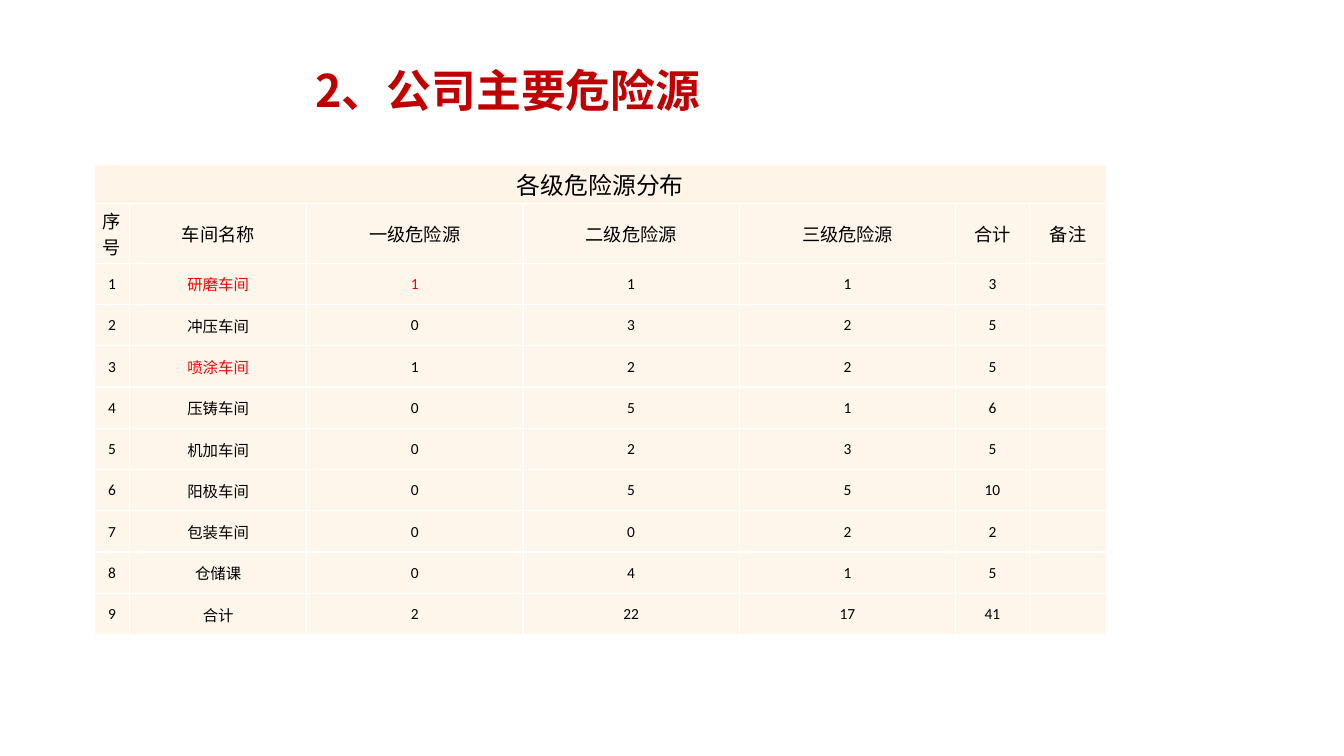
from pptx import Presentation
from pptx.dml.color import RGBColor
from pptx.enum import text as tx
from pptx.oxml import parse_xml
from pptx.oxml.ns import nsdecls
from pptx.util import Cm, Pt

# Content
TITLE = "2、公司主要危险源"
CAPTION = "各级危险源分布"
HEADS = ["序号", "车间名称", "一级危险源", "二级危险源", "三级危险源", "合计", "备注"]
SHOPS = [
    ("研磨车间", 1, 1, 1, 3),
    ("冲压车间", 0, 3, 2, 5),
    ("喷涂车间", 1, 2, 2, 5),
    ("压铸车间", 0, 5, 1, 6),
    ("机加车间", 0, 2, 3, 5),
    ("阳极车间", 0, 5, 5, 10),
    ("包装车间", 0, 0, 2, 2),
    ("仓储课", 0, 4, 1, 5),
    ("合计", 2, 22, 17, 41),
]
ALERTS = {(2, 1), (2, 2), (4, 1)}  # red cells: row, column

# Style
CJK, LATIN = "Noto Sans CJK SC", "Calibri"
BLACK, RED, DARK, CREAM, WHITE = "000000", "FF0000", "C00000", "FFF4E7", "FFFFFF"
WIDTHS = [0.9, 4.46, 5.45, 5.45, 5.45, 1.86, 1.95]
HEIGHTS = [0.99, 1.5] + [1.04] * len(SHOPS)
SIZES = [17, 13] + [11] * len(SHOPS)


def paint(target, code):
    target.rgb = RGBColor.from_string(code)


def write(para, words, size, color, face, bold=False):
    run = para.add_run()
    run.text = words
    font = run.font
    font.size, font.bold, font.name = Pt(size), bold, face
    paint(font.color, color)
    font._element.find("{*}latin").addnext(
        parse_xml(f'<a:ea {nsdecls("a")} typeface="{CJK}"/>'))


def dress(cell, alpha):
    cell.margin_left = cell.margin_right = cell.margin_top = Cm(0.02)
    cell.margin_bottom = 0
    cell.vertical_anchor = tx.MSO_ANCHOR.MIDDLE
    cell.fill.solid()
    paint(cell.fill.fore_color, CREAM)
    props = cell._tc.get_or_add_tcPr()
    if alpha < 100:
        props.find(".//{*}srgbClr").append(
            parse_xml(f'<a:alpha {nsdecls("a")} val="{alpha * 1000}"/>'))
    for i, side in enumerate("LRTB"):
        props.insert(i, parse_xml(
            f'<a:ln{side} {nsdecls("a")} w="12700"><a:solidFill>'
            f'<a:srgbClr val="{WHITE}"/></a:solidFill></a:ln{side}>'))


deck = Presentation()
deck.slide_width, deck.slide_height = Cm(33.87), Cm(19.05)
slide = deck.slides.add_slide(deck.slide_layouts[6])

# Title
box = slide.shapes.add_textbox(Cm(7.7), Cm(1.45), Cm(15), Cm(1.62))
frame = box.text_frame
frame.word_wrap = True
frame.auto_size = tx.MSO_AUTO_SIZE.SHAPE_TO_FIT_TEXT
frame.paragraphs[0].alignment = tx.PP_ALIGN.JUSTIFY
write(frame.paragraphs[0], TITLE, 32, DARK, CJK, True)

# Table grid
rows = [[CAPTION] + [""] * (len(HEADS) - 1), HEADS]
rows += [[n, *shop, ""] for n, shop in enumerate(SHOPS, 1)]
grid = slide.shapes.add_table(
    len(rows), len(HEADS), Cm(2.37), Cm(4.14),
    Cm(sum(WIDTHS)), Cm(sum(HEIGHTS))).table
grid.first_row = grid.horz_banding = False
for col, width in zip(grid.columns, WIDTHS):
    col.width = Cm(width)
for row, height in zip(grid.rows, HEIGHTS):
    row.height = Cm(height)

# Table cells
for r, row in enumerate(rows):
    for c, value in enumerate(row):
        cell = grid.cell(r, c)
        dress(cell, 80 if r else 100)
        if value != "":
            para = cell.text_frame.paragraphs[0]
            para.alignment = tx.PP_ALIGN.CENTER
            color = RED if (r, c) in ALERTS else BLACK
            write(para, str(value), SIZES[r], color, LATIN)
grid.cell(0, 0).merge(grid.cell(0, len(HEADS) - 1))

deck.save("out.pptx")
